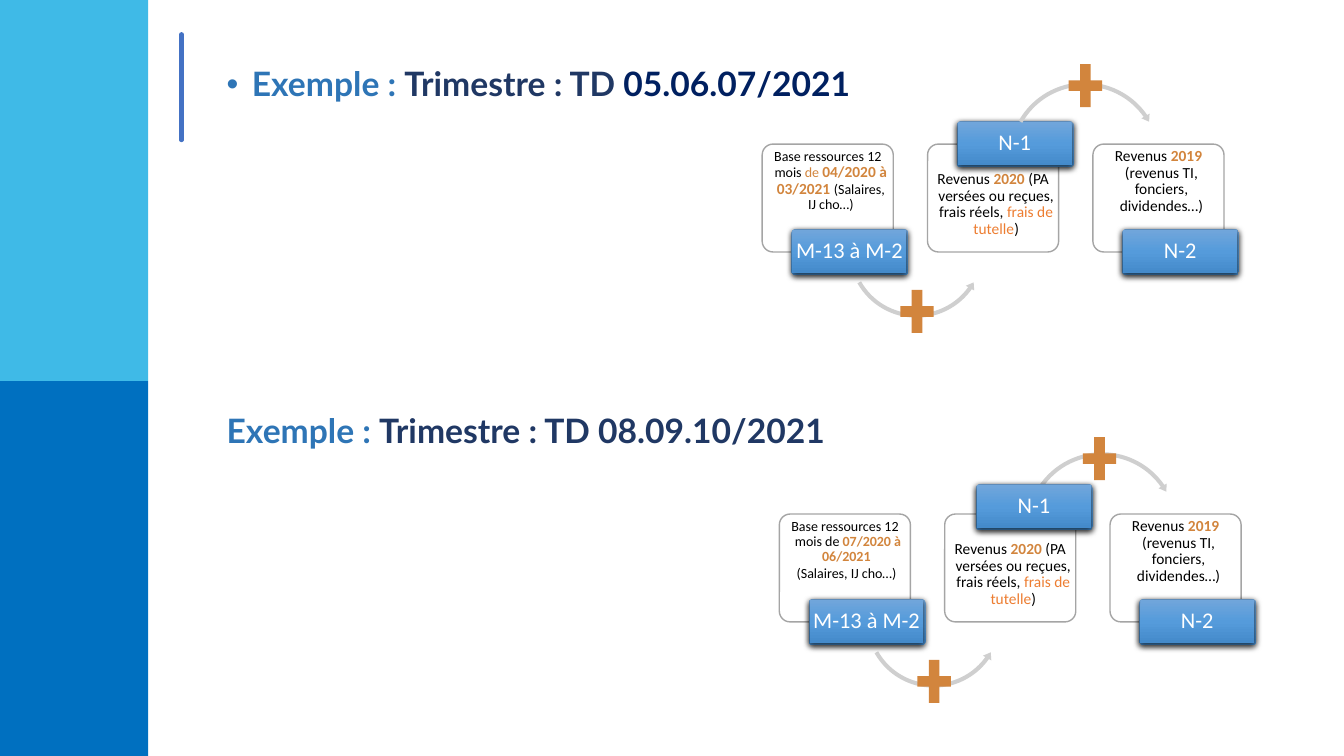
import pptx
import pptx.util
import pptx.oxml
import pptx.dml.color
import pptx.enum.shapes
import pptx.enum.text

Inches = pptx.util.Inches
Pt = pptx.util.Pt
RGBColor = pptx.dml.color.RGBColor
Shape = pptx.enum.shapes.MSO_SHAPE
Align = pptx.enum.text.PP_ALIGN
Anchor = pptx.enum.text.MSO_ANCHOR

SKY = RGBColor(0x3F, 0xBA, 0xE7)
BLUE = RGBColor(0x00, 0x70, 0xC0)
RULE = RGBColor(0x44, 0x72, 0xC4)
TITLE_BLUE = RGBColor(0x2E, 0x75, 0xB6)
NAVY = RGBColor(0x20, 0x38, 0x64)
DARK_NAVY = RGBColor(0x00, 0x20, 0x60)
OCHRE = RGBColor(0xD2, 0x85, 0x3D)
ORANGE = RGBColor(0xED, 0x7D, 0x31)
GREY = RGBColor(0xCF, 0xCF, 0xCF)
BORDER = RGBColor(0xA5, 0xA5, 0xA5)
BLACK = RGBColor(0, 0, 0)
WHITE = RGBColor(0xFF, 0xFF, 0xFF)
LABEL_STOPS = [(0, RGBColor(0x71, 0xA6, 0xDB)),
               (50, RGBColor(0x55, 0x9B, 0xDB)),
               (100, RGBColor(0x44, 0x8A, 0xCA))]
DRAWING = 'xmlns:a="http://schemas.openxmlformats.org/drawingml/2006/main"'

deck = pptx.Presentation()
deck.slide_width, deck.slide_height = Inches(13.33), Inches(7.5)
page = deck.slides.add_slide(deck.slide_layouts[6])


def add_shape(preset, left, top, width, height, fill=None, adjustments=()):
    """Add a shape without outline; fill=None leaves the fill to the caller."""
    shape = page.shapes.add_shape(preset, Inches(left), Inches(top),
                                  Inches(width), Inches(height))
    for index, value in enumerate(adjustments):
        shape.adjustments[index] = value
    shape.shadow.inherit = False
    shape.line.fill.background()
    if fill is not None:
        shape.fill.solid()
        shape.fill.fore_color.rgb = fill
    return shape


def write(box, paragraphs, *, font="Calibri", align=Align.CENTER, anchor=Anchor.TOP,
          inset=(0.02, 0.02), hanging=0, space_after=0, bullet=False, wrap=True):
    """Fill a box with paragraphs, each a list of (text, size, color, bold)."""
    frame = box.text_frame
    frame.word_wrap = wrap
    frame.vertical_anchor = anchor
    frame.margin_left = frame.margin_right = Inches(inset[0])
    frame.margin_top = frame.margin_bottom = Inches(inset[1])
    for number, spans in enumerate(paragraphs):
        para = frame.add_paragraph() if number else frame.paragraphs[0]
        para.alignment = align
        para.line_spacing = 0.9
        para.space_after = Pt(space_after)
        if hanging:
            properties = para._p.get_or_add_pPr()
            properties.set("marL", str(Inches(hanging)))
            properties.set("indent", str(-Inches(hanging)))
            if bullet:
                for tag in ('buFont {} typeface="Arial"', 'buChar {} char="•"'):
                    properties.append(pptx.oxml.parse_xml(f"<a:{tag.format(DRAWING)}/>"))
        for text, size, color, bold in spans:
            span = para.add_run()
            span.text = text
            span.font.name = font
            span.font.size = Pt(size)
            span.font.color.rgb = color
            span.font.bold = bold


# Side bands and rule
add_shape(Shape.RECTANGLE, 0, 3.78, 1.47, 3.72, BLUE)
add_shape(Shape.RECTANGLE, 0, 0, 1.47, 3.78, SKY)
rule = page.shapes.add_connector(pptx.enum.shapes.MSO_CONNECTOR.STRAIGHT, Inches(1.8),
                                 Inches(0.34), Inches(1.8), Inches(1.39))
rule.line.color.rgb = RULE
rule.line.width = Pt(3)
rule.line._get_or_add_ln().set("cap", "rnd")
rule._element.spPr.append(pptx.oxml.parse_xml(f"<a:effectLst {DRAWING}/>"))

# Headings
heading = page.shapes.add_textbox(Inches(2.15), Inches(0.62), Inches(7.24), Inches(0.49))
write(heading, [[("Exemple : ", 24, TITLE_BLUE, True), ("Trimestre : TD ", 24, NAVY, True),
                 ("05.06.07/2021", 24, DARK_NAVY, True)]],
      font="Lato", align=Align.LEFT, inset=(0.1, 0.05), hanging=0.25, bullet=True)
heading = page.shapes.add_textbox(Inches(2.15), Inches(4), Inches(9.23), Inches(0.58))
write(heading, [[("Exemple : ", 24, TITLE_BLUE, True),
                 ("Trimestre : TD 08.09.10/2021", 24, NAVY, True)]],
      font="Lato", align=Align.LEFT, anchor=Anchor.MIDDLE, inset=(0.1, 0.05))

# Diagrams: three panels with labels, joined by arcs and plus signs
base_may = [[("Base ressources 12 mois ", 10, BLACK, False), ("de ", 10, OCHRE, False),
             ("04/2020 à 03/2021 ", 11, OCHRE, True), ("(Salaires, IJ cho…)", 10, BLACK, False)]]
base_august = [[("Base ressources 12 mois de ", 10, BLACK, False),
                ("07/2020 à 06/2021 ", 10, OCHRE, True)],
               [(" (Salaires, IJ cho…)", 10, BLACK, False)]]
income_2020 = [[("Revenus ", 11, BLACK, False), ("2020 ", 11, OCHRE, True),
                ("(PA versées ou reçues, frais réels, ", 11, BLACK, False),
                ("frais de tutelle", 11, ORANGE, False), (")", 11, BLACK, False)]]
income_2019 = [[("Revenus ", 11, BLACK, False), ("2019 ", 11, OCHRE, True),
                ("(revenus TI, fonciers, dividendes…)", 11, BLACK, False)]]
stops = "".join(f'<a:gs pos="{position * 1000}"><a:srgbClr val="{color}"/></a:gs>'
                for position, color in LABEL_STOPS)
label_fill = (f'<a:gradFill {DRAWING}><a:gsLst>{stops}</a:gsLst>'
              '<a:lin ang="5400000" scaled="0"/></a:gradFill>')
label_shadow = (f'<a:effectLst {DRAWING}><a:outerShdw blurRad="{Pt(4.5)}" dist="{Pt(1.5)}" '
                'dir="5400000" algn="ctr" rotWithShape="0"><a:srgbClr val="000000">'
                '<a:alpha val="63000"/></a:srgbClr></a:outerShdw></a:effectLst>')

# Left, top, base text, then places of the N-1 label and the upper plus sign
diagrams = [(7.56, 1.43, base_may, (9.49, 1.2), (10.54, 0.56)),
            (7.73, 5.1, base_august, (9.68, 4.8), (10.68, 4.26))]
for left, top, base, middle_label, upper_plus in diagrams:
    add_shape(Shape.LEFT_CIRCULAR_ARROW, left + 0.83, top + 0.35, 1.4, 1.4, GREY,
              (0.029, 3.548, 21.303, 90.245, 0.034))
    for column, (text, text_drop) in enumerate([(base, 0.02), (income_2020, 0.25),
                                                (income_2019, 0.02)]):
        panel_left = left + 1.64 * column
        panel = add_shape(Shape.ROUNDED_RECTANGLE, panel_left, top, 1.3, 1.07, WHITE, (0.1,))
        color = panel.fill._xPr.solidFill[0]
        color.append(pptx.oxml.parse_xml(f'<a:alpha {DRAWING} val="90000"/>'))
        panel.line.color.rgb = BORDER
        panel.line.width = Pt(1)
        box = page.shapes.add_textbox(Inches(panel_left + 0.025), Inches(top + text_drop),
                                      Inches(1.25), Inches(0.79))
        inset = 0.03 if column == 0 else 0.02
        write(box, text, inset=(inset, inset), hanging=0.06, space_after=1.5)

    add_shape(Shape.MATH_PLUS, left + 1.31, top + 1.37, 0.45, 0.58, OCHRE)
    labels = [("M-13 à M-2", left + 0.29, top + 0.84), ("N-1", *middle_label),
              ("N-2", left + 3.57, top + 0.84)]
    arc = (left + 2.42, top - 0.64)
    if top < 2:
        steps = [*labels, None]
    else:
        steps = [labels[0], labels[2], None, labels[1]]
    for step in steps:
        if step is None:
            add_shape(Shape.CIRCULAR_ARROW, *arc, 1.56, 1.56, GREY,
                      (0.026, 3.149, 195.096, 125.755, 0.03))
            add_shape(Shape.MATH_PLUS, *upper_plus, 0.45, 0.58, OCHRE)
            continue
        name, label_left, label_top = step
        plate = add_shape(Shape.ROUNDED_RECTANGLE, label_left, label_top, 1.16, 0.46,
                          adjustments=(0.1,))
        face = add_shape(Shape.RECTANGLE, label_left + 0.01, label_top + 0.01, 1.13, 0.43)
        for part in (plate, face):
            properties = part._element.spPr
            properties.insert(2, pptx.oxml.parse_xml(label_fill))
            properties.remove(properties[-1])
            properties.append(pptx.oxml.parse_xml(label_shadow))
        write(face, [[(name, 16, WHITE, False)]], anchor=Anchor.MIDDLE, inset=(0.03, 0.02),
              wrap=False)

deck.save("out.pptx")
